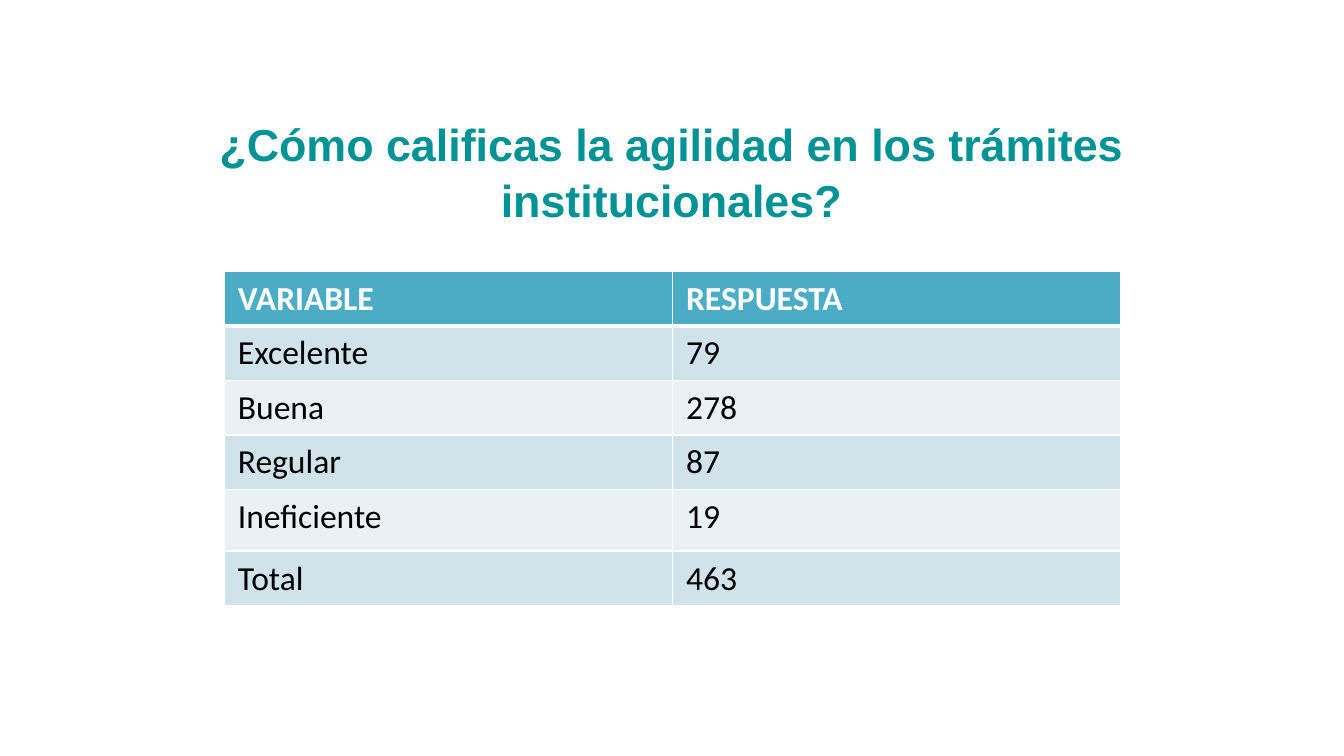
from lxml import etree
from pptx import Presentation
from pptx.dml.color import RGBColor
from pptx.enum.text import MSO_ANCHOR, PP_ALIGN
from pptx.oxml.ns import qn
from pptx.util import Inches, Pt

MIDDLE = MSO_ANCHOR.MIDDLE
CENTER = PP_ALIGN.CENTER
TITLE_ONLY = 5
SLIDE_WIDTH = 10

QUESTION = ("¿Cómo calificas la agilidad en los trámites", "institucionales?")
ANSWERS = [
    ("VARIABLE", "RESPUESTA"),
    ("Excelente", "79"),
    ("Buena", "278"),
    ("Regular", "87"),
    ("Ineficiente", "19"),
    ("Total", "463"),
]
TABLE_HEIGHT = 2.48
TALL_ROW, TALL_HEIGHT = 4, 0.46


def color(value):
    return RGBColor.from_string(value)


class SurveySlide:
    TITLE_FONT, BODY_FONT = "Arial", "Calibri"
    TEAL, HEADER, WHITE, BLACK = "019296", "4BACC6", "FFFFFF", "000000"
    BANDS = ("D0E3EA", "E9F1F5")

    def __init__(self, presentation):
        layout = presentation.slide_layouts[TITLE_ONLY]
        self.slide = presentation.slides.add_slide(layout)

    def add_run(self, paragraph, text, font_name, size, ink, bold):
        run = paragraph.add_run()
        run.text = text
        run.font.name = font_name
        run.font.size = Pt(size)
        run.font.bold = bold
        run.font.color.rgb = color(ink)

    def add_title(self, lines, left, top, width, height):
        title = self.slide.shapes.title
        title.left, title.top = Inches(left), Inches(top)
        title.width, title.height = Inches(width), Inches(height)
        frame = title.text_frame
        frame.word_wrap = True
        frame.vertical_anchor = MIDDLE
        paragraph = frame.paragraphs[0]
        paragraph.alignment = CENTER
        paragraph.line_spacing = 1.03
        for index, line in enumerate(lines):
            if index:
                paragraph.add_line_break()
            self.add_run(paragraph, line, self.TITLE_FONT, 24, self.TEAL, True)

    def add_borders(self, cell, top, bottom):
        """Draw white cell borders; top and bottom are widths in points."""
        properties = cell._tc.get_or_add_tcPr()
        widths = {"a:lnL": 1, "a:lnR": 1, "a:lnT": top, "a:lnB": bottom}
        for position, (tag, width) in enumerate(widths.items()):
            line = etree.Element(qn(tag), w=str(Pt(width)))
            fill = etree.SubElement(line, qn("a:solidFill"))
            etree.SubElement(fill, qn("a:srgbClr"), val=self.WHITE)
            properties.insert(position, line)

    def add_answer_table(self, rows, left, top, width, height):
        table = self.slide.shapes.add_table(
            len(rows), len(rows[0]), Inches(left), Inches(top),
            Inches(width), Inches(height)).table
        row_height = (height - TALL_HEIGHT) / (len(rows) - 1)
        for r, answers in enumerate(rows):
            is_header = r == 0
            table.rows[r].height = Inches(
                TALL_HEIGHT if r == TALL_ROW else row_height)
            background = self.HEADER if is_header else self.BANDS[(r - 1) % 2]
            ink = self.WHITE if is_header else self.BLACK
            for c, answer in enumerate(answers):
                cell = table.cell(r, c)
                cell.fill.solid()
                cell.fill.fore_color.rgb = color(background)
                self.add_run(cell.text_frame.paragraphs[0], answer,
                             self.BODY_FONT, 18, ink, is_header)
                self.add_borders(cell, 3 if r == 1 else 1, 3 if is_header else 1)


def main():
    presentation = Presentation()
    presentation.slide_width = Inches(SLIDE_WIDTH)
    presentation.slide_height = Inches(SLIDE_WIDTH * 9 / 16)
    survey = SurveySlide(presentation)
    survey.add_title(QUESTION, 0.64, 0.86, 8.71, 0.82)
    survey.add_answer_table(ANSWERS, 1.67, 2.02, 6.67, TABLE_HEIGHT)
    presentation.save("out.pptx")


if __name__ == "__main__":
    main()
